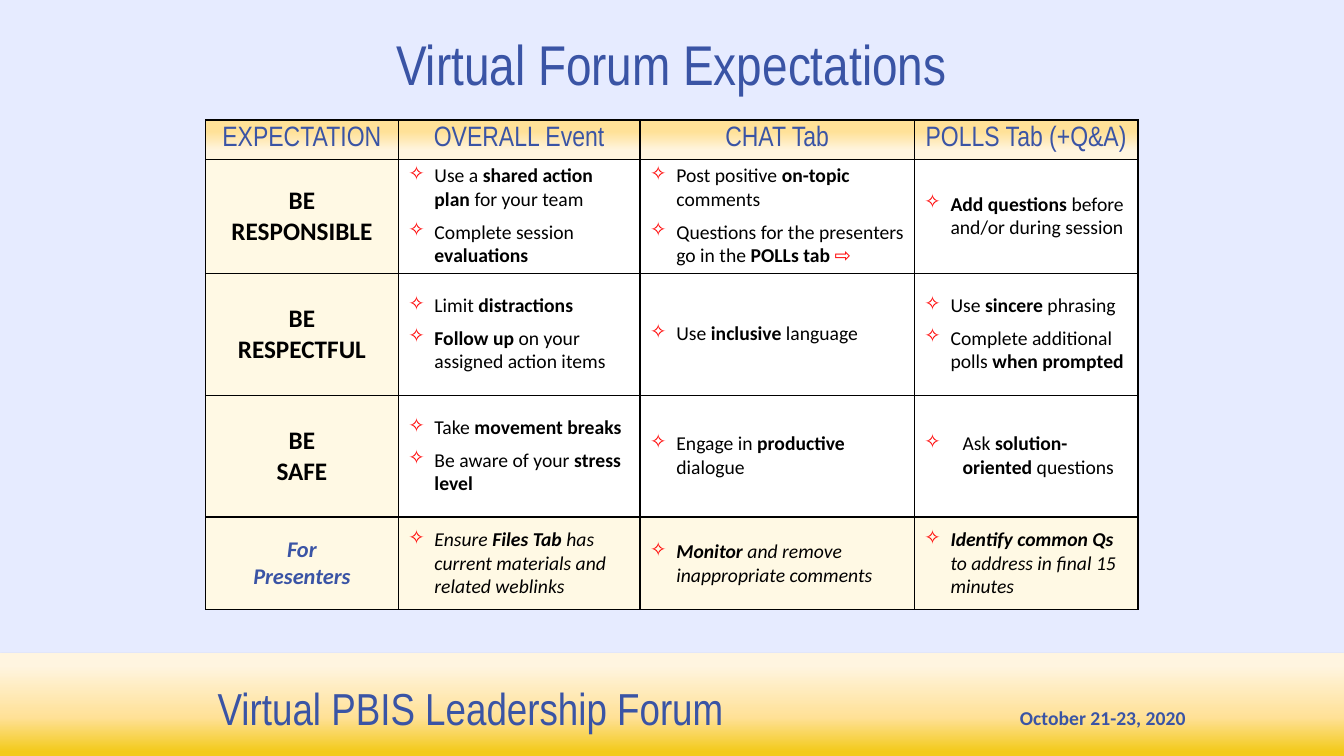
from dataclasses import dataclass

from lxml.etree import SubElement
from pptx import Presentation
from pptx.dml.color import RGBColor
from pptx.enum.shapes import MSO_SHAPE as Preset
from pptx.enum.text import MSO_ANCHOR as Anchor, PP_ALIGN as Align
from pptx.oxml.ns import qn
from pptx.util import Emu, Inches, Pt

WIDTH, HEIGHT = Inches(13.33), Inches(7.5)
COLUMN, ROW = WIDTH / 100, HEIGHT / 100

BLUE = RGBColor(0x3A, 0x54, 0xA5)
TINT = RGBColor(0x58, 0x7C, 0xFF)
GOLD = RGBColor(0xF3, 0xCA, 0x1A)
AMBER = RGBColor(0xFF, 0xE1, 0x98)
PALE = RGBColor(0xFF, 0xF5, 0xE0)
CREAM = RGBColor(0xFF, 0xF9, 0xE4)
WHITE = RGBColor(0xFF, 0xFF, 0xFF)
BLACK = RGBColor(0, 0, 0)
RED = RGBColor(0xFF, 0, 0)

HEADING_FONT, BODY_FONT = "Arial Narrow", "Calibri"
BULLET, POINTER, BOLD_MARK = "✧", "⇨", "**"
TAB_STOP = 3.75


@dataclass(frozen=True)
class Area:
    left: float
    top: float
    width: float
    height: float

    def box(self) -> tuple[Emu, ...]:
        return (Emu(round(self.left * COLUMN)), Emu(round(self.top * ROW)),
                Emu(round(self.width * COLUMN)), Emu(round(self.height * ROW)))


@dataclass(frozen=True)
class Point:
    text: str
    indent: float = 1.95
    space_after: int = 6


@dataclass(frozen=True)
class Expectation:
    label: list[str]
    height: float
    points: list[list[Point]]
    for_presenters: bool = False


HEADINGS = ["EXPECTATION", "OVERALL Event", "CHAT Tab", "POLLS Tab (+Q&A)"]
HEADING_HEIGHT = 5.2
COLUMN_WIDTHS = [14.33, 18, 20.4, 16.65]
EXPECTATIONS = [
    Expectation(["BE", "RESPONSIBLE"], 15.07, [
        [Point("Use a **shared action plan **for your team"),
         Point("Complete session **evaluations**")],
        [Point("Post positive **on-topic** comments"),
         Point("Questions for the presenters go in the **POLLs tab **⇨")],
        [Point("**Add questions **before and/or during session")]]),
    Expectation(["BE", "RESPECTFUL"], 16.13, [
        [Point("Limit **distractions**"),
         Point("**Follow up **on your assigned action items")],
        [Point("Use **inclusive** language")],
        [Point("Use **sincere** phrasing"),
         Point("Complete additional polls **when prompted**")]]),
    Expectation(["BE", "SAFE"], 16.13, [
        [Point("Take** movement breaks**"),
         Point("Be aware of your **stress level**")],
        [Point("Engage in **productive** dialogue")],
        [Point("Ask **solution-oriented** questions", 2.85, 0)]]),
    Expectation(["For", "Presenters"], 12.27, [
        [Point("Ensure **Files Tab **has current materials and related weblinks")],
        [Point("**Monitor** and remove inappropriate comments")],
        [Point("**Identify common Qs **to address in final 15 minutes")]], True),
]


def style(font, name: str, size: int, color: RGBColor,
          bold: bool | None = None, italic: bool | None = None) -> None:
    font.name, font.size, font.color.rgb = name, Pt(size), color
    font.bold, font.italic = bold, italic


def add_tab(properties, position: float) -> None:
    SubElement(SubElement(properties, qn("a:tabLst")), qn("a:tab"),
               pos=str(round(position * COLUMN)), algn="l")


def add_panel(slide, area: Area):
    panel = slide.shapes.add_shape(Preset.RECTANGLE, *area.box())
    panel.shadow.inherit = False
    panel.line.fill.background()
    return panel


def fill_gradient(panel, stops: list[tuple[int, RGBColor]], angle: int) -> None:
    panel.fill.gradient()
    panel.fill.gradient_angle = angle
    stop_list = next(panel.element.iter(qn("a:gsLst")))
    stop_list.clear()
    for percent, color in stops:
        stop = SubElement(stop_list, qn("a:gs"), pos=str(percent * 1000))
        SubElement(stop, qn("a:srgbClr"), val=str(color))


def add_alpha(color_element, percent: int) -> None:
    SubElement(color_element, qn("a:alpha"), val=str(percent * 1000))


def add_backdrop(slide) -> None:
    tint = add_panel(slide, Area(0, 0, 100, 89.33))
    tint.fill.solid()
    tint.fill.fore_color.rgb = TINT
    add_alpha(next(tint.element.iter(qn("a:srgbClr"))), 15)

    band = add_panel(slide, Area(0, 86.4, 100, 13.6))
    fill_gradient(band, [(4, GOLD), (38, AMBER), (88, PALE)], 90)
    shadow = SubElement(next(band.element.iter(qn("a:effectLst"))), qn("a:outerShdw"),
                        blurRad=str(Pt(3.1)), dist=str(Pt(1.8)), dir="5400000")
    add_alpha(SubElement(shadow, qn("a:srgbClr"), val=str(BLACK)), 35)


def add_footer(slide) -> None:
    footer = slide.shapes.add_textbox(*Area(15.45, 89.33, 81.75, 8.53).box()).text_frame
    footer.word_wrap = True
    line = footer.paragraphs[0]
    add_tab(line._p.get_or_add_pPr(), 59.7)
    forum, date = line.add_run(), line.add_run()
    forum.text, date.text = "Virtual PBIS Leadership Forum\t", "October 21-23, 2020"
    style(forum.font, HEADING_FONT, 32, BLUE)
    style(date.font, BODY_FONT, 14, BLUE, True)


def add_title(slide) -> None:
    title = slide.shapes.title
    title.left, title.top, title.width, title.height = Area(16.2, 0.93, 67.5, 14.93).box()
    title.text_frame.vertical_anchor = Anchor.MIDDLE
    heading = title.text_frame.paragraphs[0]
    heading.text, heading.alignment = "Virtual Forum Expectations", Align.CENTER
    style(heading.font, HEADING_FONT, 40, BLUE)


def prepare_cell(cell, color: RGBColor | None) -> None:
    cell.vertical_anchor = Anchor.MIDDLE
    properties = cell._tc.get_or_add_tcPr()
    for side in ("lnL", "lnR", "lnT", "lnB"):
        border = SubElement(properties, qn(f"a:{side}"), w=str(Pt(1)))
        SubElement(SubElement(border, qn("a:solidFill")), qn("a:srgbClr"), val=str(BLACK))
    if color is None:
        cell.fill.background()
    else:
        cell.fill.solid()
        cell.fill.fore_color.rgb = color


def write_centred(cell, lines: list[str], font: str, size: int, color: RGBColor,
                  bold: bool = False, italic: bool = False) -> None:
    cell.text_frame.text = "\n".join(lines)
    for line in cell.text_frame.paragraphs:
        line.alignment = Align.CENTER
        style(line.font, font, size, color, bold, italic)


def write_points(cell, points: list[Point], italic: bool) -> None:
    frame = cell.text_frame
    for index, point in enumerate(points):
        line = frame.add_paragraph() if index else frame.paragraphs[0]
        properties = line._p.get_or_add_pPr()
        indent = round(point.indent * COLUMN)
        properties.set("marL", str(indent))
        properties.set("indent", str(-indent))
        SubElement(SubElement(properties, qn("a:buClr")), qn("a:srgbClr"), val=str(RED))
        SubElement(properties, qn("a:buChar"), char=BULLET)
        add_tab(properties, TAB_STOP)
        line.space_after = Pt(point.space_after)
        style(line.font, BODY_FONT, 14, BLACK, italic=italic)
        for position, piece in enumerate(point.text.split(BOLD_MARK)):
            if piece:
                run = line.add_run()
                run.text, run.font.bold = piece, position % 2 == 1
                if piece == POINTER:
                    run.font.color.rgb = RED


def add_expectations(slide) -> None:
    heights = [HEADING_HEIGHT, *(item.height for item in EXPECTATIONS)]
    area = Area(15.3, 15.87, sum(COLUMN_WIDTHS), sum(heights))
    heading_band = add_panel(slide, Area(area.left, area.top, area.width, HEADING_HEIGHT))
    fill_gradient(heading_band, [(30, AMBER), (78, PALE)], 270)

    matrix = slide.shapes.add_table(len(heights), len(HEADINGS), *area.box()).table
    matrix.first_row = matrix.horz_banding = False
    for column, width in zip(matrix.columns, COLUMN_WIDTHS):
        column.width = Emu(round(width * COLUMN))
    for row, height in zip(matrix.rows, heights):
        row.height = Emu(round(height * ROW))

    for cell, heading in zip(matrix.rows[0].cells, HEADINGS):
        prepare_cell(cell, None)
        write_centred(cell, [heading], HEADING_FONT, 20, BLUE)
    for index, item in enumerate(EXPECTATIONS, 1):
        label, *details = matrix.rows[index].cells
        presenters = item.for_presenters
        prepare_cell(label, CREAM)
        write_centred(label, item.label, BODY_FONT, 16 if presenters else 18,
                      BLUE if presenters else BLACK, True, presenters)
        for cell, points in zip(details, item.points):
            prepare_cell(cell, CREAM if presenters else WHITE)
            write_points(cell, points, presenters)


def main() -> None:
    deck = Presentation()
    deck.slide_width, deck.slide_height = WIDTH, HEIGHT
    slide = deck.slides.add_slide(deck.slide_layouts[5])
    add_backdrop(slide)
    add_footer(slide)
    add_title(slide)
    add_expectations(slide)
    title = slide.shapes.title.element
    slide.shapes._spTree.remove(title)
    slide.shapes._spTree.insert(5, title)
    deck.save("out.pptx")


if __name__ == "__main__":
    main()
